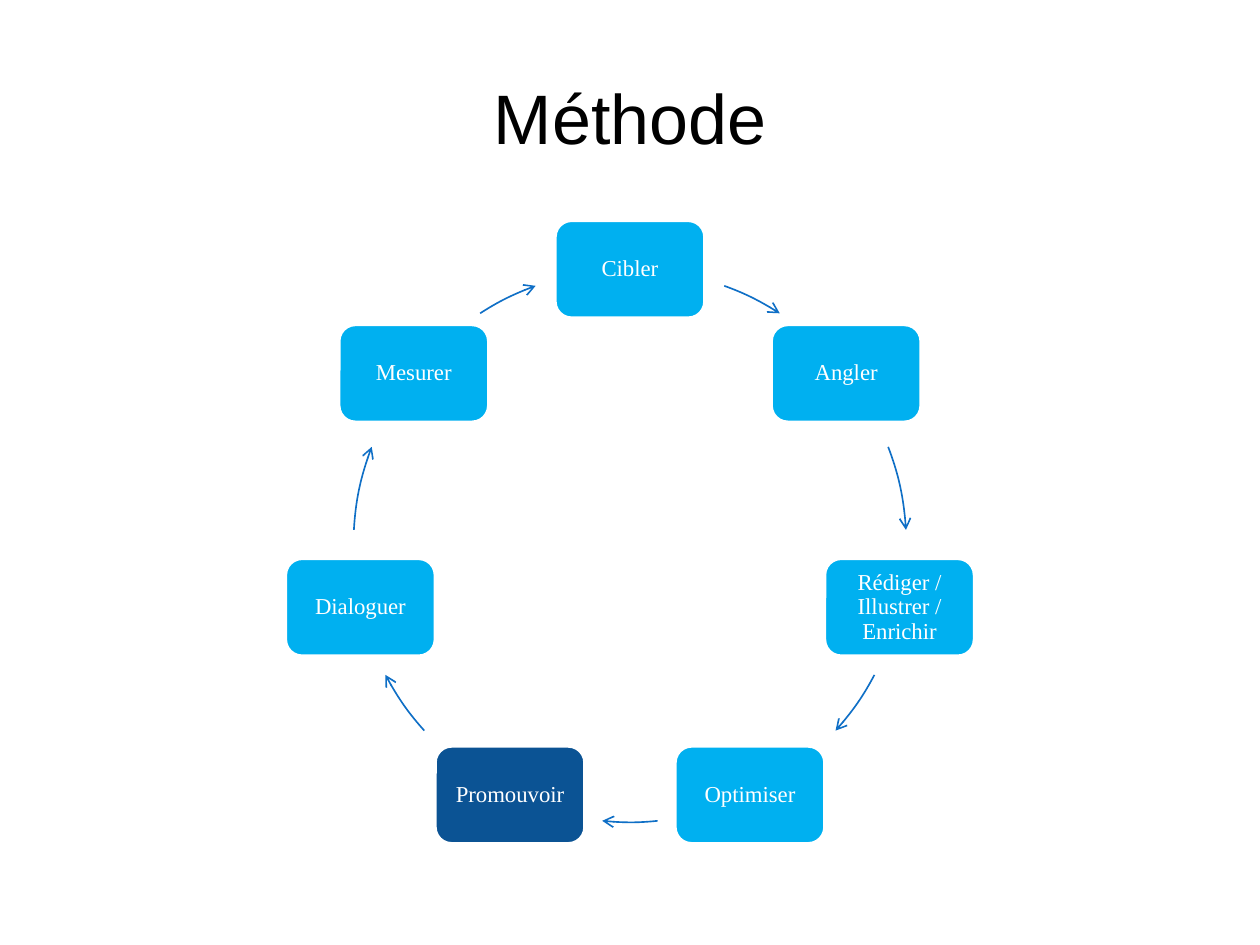
import math
import pptx
import pptx.util
import pptx.dml.color
import pptx.enum.shapes
import pptx.enum.text
import pptx.oxml.ns
import lxml.etree

Pt = pptx.util.Pt
RGB = pptx.dml.color.RGBColor.from_string
qn = pptx.oxml.ns.qn

# Content
TITLE = "Méthode"
STEPS = ["Cibler", "Angler", "Rédiger / Illustrer / Enrichir", "Optimiser",
         "Promouvoir", "Dialoguer", "Mesurer"]
HIGHLIGHT = "Promouvoir"

THEME = {
    "step": "00B0F0", "highlight": "0B5394", "arrow": "0F6FC6",
    "light": "FFFFFF", "dark": "000000",
    "title_font": "Arial", "title_size": 40,
    "step_font": "Times New Roman", "step_size": 13,
}

# Ring geometry: points, and degrees clockwise from the top
CENTER_X, CENTER_Y, RADIUS = 360, 311.9, 158
STEP_WIDTH, STEP_HEIGHT = 85.2, 55.4
RIGHT_ARCS = [(19.95, 32.8), (69.05, 86.7), (117.85, 131.95)]
BOTTOM_ARC = (174.25, 185.75)
LEFT_ARCS = [(360 - end, 360 - start) for start, end in reversed(RIGHT_ARCS)]
ARCS = RIGHT_ARCS + [BOTTOM_ARC] + LEFT_ARCS


def ring_point(degrees):
    angle = math.radians(degrees)
    return (CENTER_X + RADIUS * math.sin(angle),
            CENTER_Y - RADIUS * math.cos(angle))


def write(frame, text, font, size, color):
    frame.word_wrap = True
    frame.vertical_anchor = pptx.enum.text.MSO_ANCHOR.MIDDLE
    para = frame.paragraphs[0]
    para.alignment = pptx.enum.text.PP_ALIGN.CENTER
    span = para.add_run()
    span.text = text
    span.font.name = font
    span.font.size = Pt(size)
    span.font.color.rgb = RGB(color)
    return para


def add_step(page, text, degrees):
    x, y = ring_point(degrees)
    box = page.shapes.add_shape(
        pptx.enum.shapes.MSO_SHAPE.ROUNDED_RECTANGLE,
        Pt(x - STEP_WIDTH / 2), Pt(y - STEP_HEIGHT / 2),
        Pt(STEP_WIDTH), Pt(STEP_HEIGHT))
    box.shadow.inherit = False
    box.fill.solid()
    box.fill.fore_color.rgb = RGB(THEME["highlight" if text == HIGHLIGHT else "step"])
    box.line.color.rgb = RGB(THEME["light"])
    box.line.width = Pt(1.5)
    frame = box.text_frame
    frame.margin_left = frame.margin_right = Pt(1)
    frame.margin_top = frame.margin_bottom = Pt(1)
    para = write(frame, text, THEME["step_font"], THEME["step_size"], THEME["light"])
    para.line_spacing = 0.9


def bezier_points(start, end):
    """Start, two controls and end of a curve along the ring."""
    sweep = math.radians(end - start)
    reach = 4 / 3 * math.tan(sweep / 4)
    (x1, y1), (x2, y2) = ring_point(start), ring_point(end)
    return [(x1, y1),
            (x1 - reach * (y1 - CENTER_Y), y1 + reach * (x1 - CENTER_X)),
            (x2 + reach * (y2 - CENTER_Y), y2 - reach * (x2 - CENTER_X)),
            (x2, y2)]


def add_arc(page, start, end):
    left, top, size = CENTER_X - RADIUS, CENTER_Y - RADIUS, 2 * RADIUS
    builder = page.shapes.build_freeform(Pt(left), Pt(top))
    builder.add_line_segments([(Pt(left + size), Pt(top + size))], close=False)
    arc = builder.convert_to_shape()

    # Within the ring's square, one cubic curve
    path = next(arc._element.iter(qn("a:path")))
    for child in list(path):
        path.remove(child)
    points = bezier_points(start, end)
    for tag, group in (("a:moveTo", points[:1]), ("a:cubicBezTo", points[1:])):
        command = lxml.etree.SubElement(path, qn(tag))
        for x, y in group:
            lxml.etree.SubElement(command, qn("a:pt"),
                                  x=str(int(Pt(x - left))), y=str(int(Pt(y - top))))

    arc.shadow.inherit = False
    arc.fill.background()
    arc.line.color.rgb = RGB(THEME["arrow"])
    arc.line.width = Pt(0.94)
    outline = arc.line._get_or_add_ln()
    lxml.etree.SubElement(outline, qn("a:tailEnd"), type="arrow")


def main():
    deck = pptx.Presentation()
    deck.slide_width, deck.slide_height = Pt(720), Pt(540)
    page = deck.slides.add_slide(deck.slide_layouts[5])

    # Title
    title = page.shapes.title
    title.left, title.top, title.width, title.height = Pt(36), Pt(21.6), Pt(648), Pt(90)
    write(title.text_frame, TITLE, THEME["title_font"], THEME["title_size"], THEME["dark"])

    # Cycle: each step followed by the arrow to the next one
    for index, (text, arc) in enumerate(zip(STEPS, ARCS)):
        add_step(page, text, index * 360 / len(STEPS))
        add_arc(page, *arc)

    deck.save("out.pptx")


if __name__ == "__main__":
    main()
